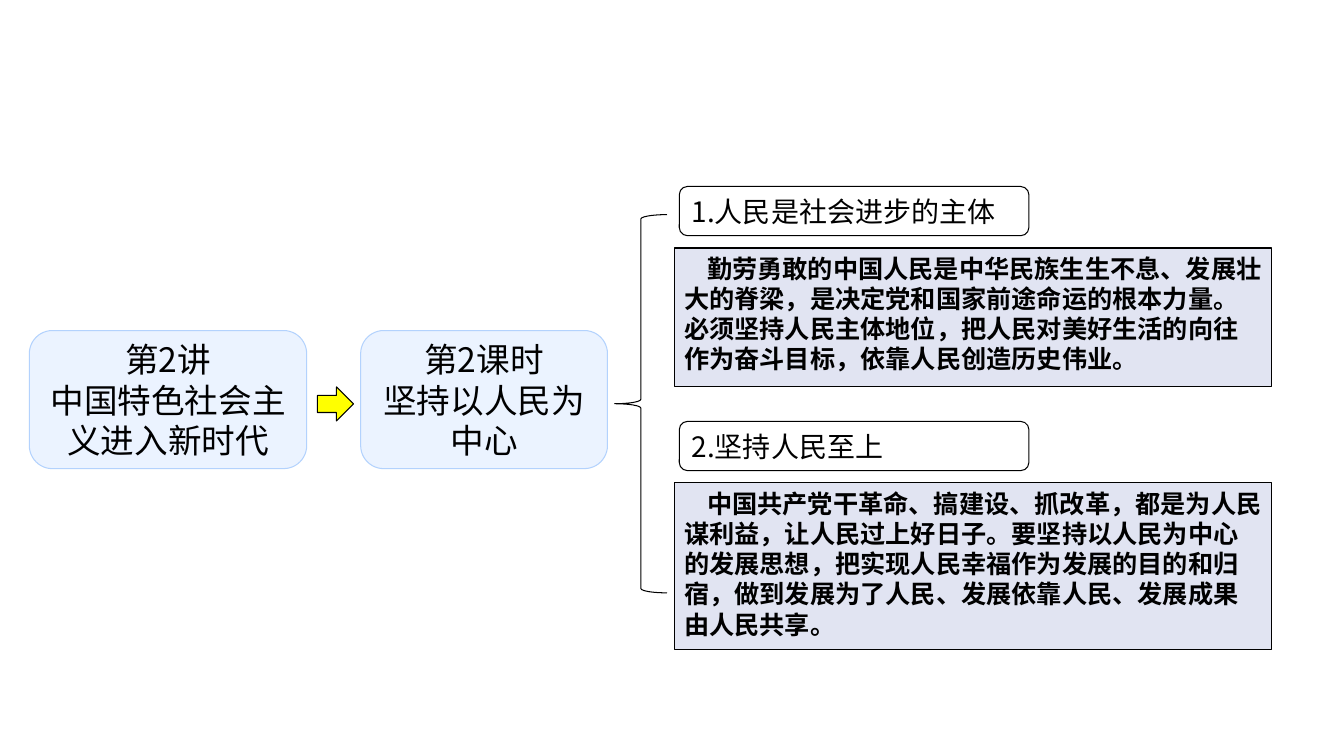
from dataclasses import dataclass
from typing import Optional

from lxml.etree import SubElement
from pptx import Presentation
from pptx.dml.color import RGBColor
from pptx.enum.shapes import MSO_SHAPE as Preset
from pptx.enum.text import MSO_ANCHOR as Anchor, PP_ALIGN as Align
from pptx.oxml.ns import qn
from pptx.util import Cm, Pt


@dataclass(frozen=True)
class Theme:
    """Colours and type sizes of the slide."""
    font: str = "Noto Sans CJK SC"
    ink: str = "000000"
    topic_fill: str = "EBF3FF"
    topic_line: str = "B3D2FD"
    detail_fill: str = "E1E4F2"
    arrow_fill: str = "FFFF00"
    topic_size: int = 24
    heading_size: int = 20
    detail_size: int = 18
    line_width: float = 0.75
    line_spacing: float = 1.2


THEME = Theme()


@dataclass(frozen=True)
class Box:
    """A preset shape, measured in centimetres."""
    preset: Preset
    left: float
    top: float
    width: float
    height: float
    fill: Optional[str] = None
    line: str = THEME.ink


@dataclass(frozen=True)
class TextStyle:
    """How the text of a box is set."""
    size: int
    align: Align = Align.LEFT
    anchor: Anchor = Anchor.MIDDLE
    bold: bool = False
    indent: float = 0


@dataclass(frozen=True)
class Topic:
    """A lesson box on the left."""
    left: float
    width: float
    lines: tuple[str, str]


@dataclass(frozen=True)
class Point:
    """A numbered heading with its explanation."""
    top: float
    detail_height: float
    heading: str
    detail: str


TOPIC_STYLE = TextStyle(THEME.topic_size, Align.CENTER)
HEADING_STYLE = TextStyle(THEME.heading_size)
DETAIL_STYLE = TextStyle(THEME.detail_size, anchor=Anchor.TOP, bold=True, indent=0.58)

TOPICS = (
    Topic(0.74, 6.99, ("第2讲", "中国特色社会主义进入新时代")),
    Topic(9.09, 6.22, ("第2课时", "坚持以人民为中心")),
)
POINTS = (
    Point(4.7, 3.48, "1.人民是社会进步的主体",
          "勤劳勇敢的中国人民是中华民族生生不息、发展壮大的脊梁，是决定党和国家前途命运的根本力量。"
          "必须坚持人民主体地位，把人民对美好生活的向往作为奋斗目标，依靠人民创造历史伟业。"),
    Point(10.62, 4.19, "2.坚持人民至上",
          "中国共产党干革命、搞建设、抓改革，都是为人民谋利益，让人民过上好日子。"
          "要坚持以人民为中心的发展思想，把实现人民幸福作为发展的目的和归宿，"
          "做到发展为了人民、发展依靠人民、发展成果由人民共享。"),
)


def add_box(slide, box: Box):
    """Draw a preset shape with its fill and outline."""
    shape = slide.shapes.add_shape(
        box.preset, Cm(box.left), Cm(box.top), Cm(box.width), Cm(box.height))
    shape.shadow.inherit = False
    if box.fill:
        shape.fill.solid()
        shape.fill.fore_color.rgb = RGBColor.from_string(box.fill)
    else:
        shape.fill.background()
    shape.line.color.rgb = RGBColor.from_string(box.line)
    shape.line.width = Pt(THEME.line_width)
    return shape


def write_text(shape, lines: tuple[str, ...], style: TextStyle) -> None:
    """Fill a shape with one paragraph per line."""
    frame = shape.text_frame
    frame.word_wrap = True
    frame.vertical_anchor = style.anchor
    frame.text = "\n".join(lines)
    for paragraph in frame.paragraphs:
        paragraph.alignment = style.align
        paragraph.line_spacing = Pt(style.size * THEME.line_spacing)
        font = paragraph.font
        font.size = Pt(style.size)
        font.bold = style.bold
        font.color.rgb = RGBColor.from_string(THEME.ink)
        font.name = THEME.font
        properties = paragraph._p.get_or_add_pPr()
        properties.set("indent", str(Cm(style.indent)))
        east_asian = SubElement(properties.find(qn("a:defRPr")), qn("a:ea"))
        east_asian.set("typeface", THEME.font)


def add_topic(slide, topic: Topic) -> None:
    """Draw a rounded lesson box."""
    box = Box(Preset.ROUNDED_RECTANGLE, topic.left, 8.33, topic.width, 3.48,
              THEME.topic_fill, THEME.topic_line)
    write_text(add_box(slide, box), topic.lines, TOPIC_STYLE)


def add_point(slide, point: Point) -> None:
    """Draw a heading and the explanation below it."""
    heading = Box(Preset.ROUNDED_RECTANGLE, 17.12, point.top, 8.81, 1.24)
    detail = Box(Preset.RECTANGLE, 16.99, point.top + 1.55, 15.06,
                 point.detail_height, THEME.detail_fill)
    write_text(add_box(slide, heading), (point.heading,), HEADING_STYLE)
    write_text(add_box(slide, detail), (point.detail,), DETAIL_STYLE)


def main() -> None:
    """Build and save the slide."""
    presentation = Presentation()
    presentation.slide_width, presentation.slide_height = Cm(33.87), Cm(19.05)
    slide = presentation.slides.add_slide(presentation.slide_layouts[6])
    for topic in TOPICS:
        add_topic(slide, topic)
    add_box(slide, Box(Preset.RIGHT_ARROW, 8, 9.75, 0.91, 0.86, THEME.arrow_fill))
    add_box(slide, Box(Preset.LEFT_BRACE, 15.49, 5.41, 1.32, 9.53))
    for point in POINTS:
        add_point(slide, point)
    presentation.save("out.pptx")


if __name__ == "__main__":
    main()
